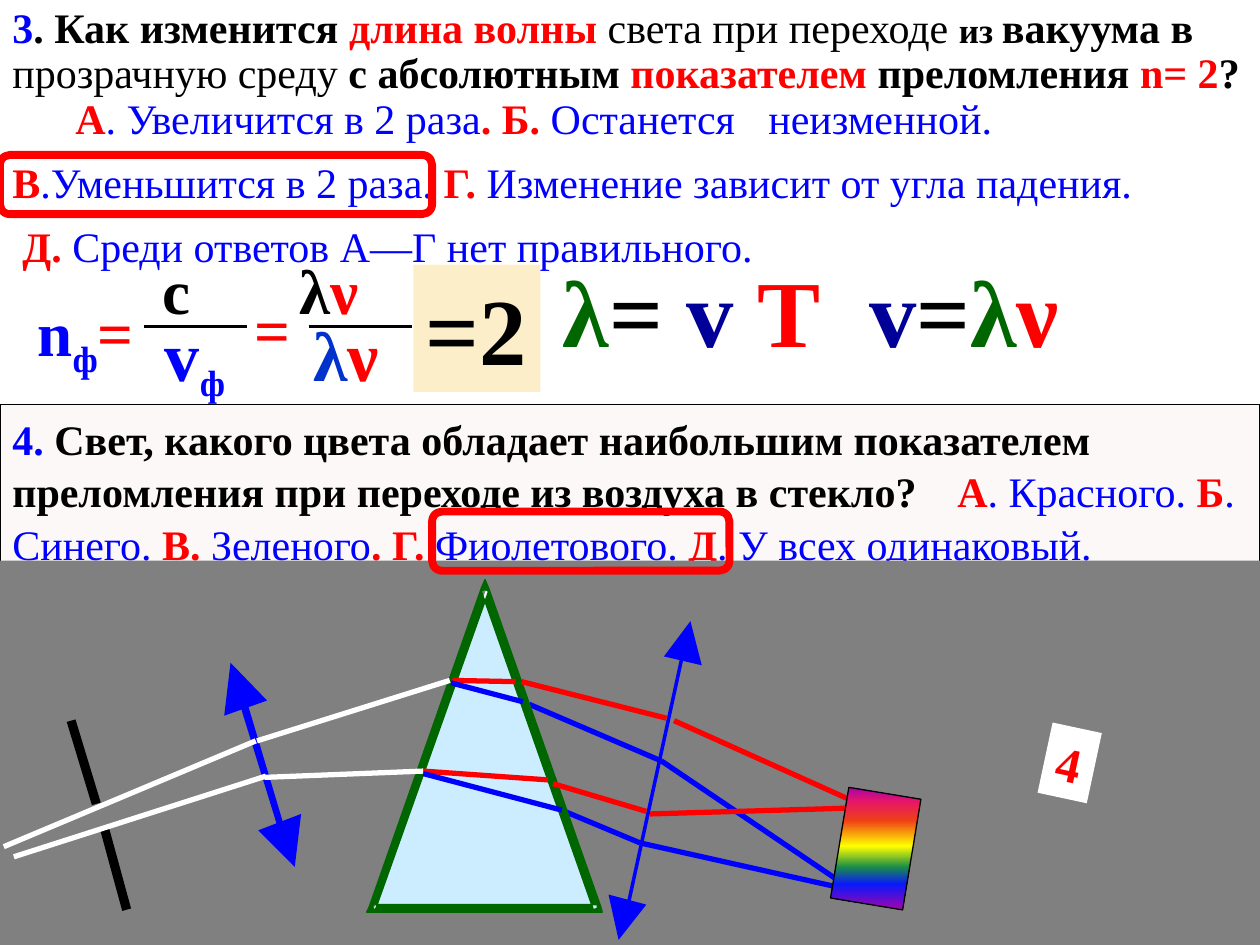
from lxml import etree
from pptx import Presentation
from pptx.dml.color import RGBColor
from pptx.enum.shapes import MSO_CONNECTOR, MSO_SHAPE
from pptx.enum.text import MSO_ANCHOR, MSO_AUTO_SIZE, PP_ALIGN
from pptx.oxml.ns import qn
from pptx.util import Emu, Pt

PX = 9144
BLACK, WHITE, GREY = "000000", "FFFFFF", "808080"
RED, BLUE, NAVY, GREEN = "FF0000", "0000FF", "000099", "006600"


def color(value):
    return RGBColor.from_string(value)


def px(*lengths):
    return [Emu(length * PX) for length in lengths]


def sub(parent, tag, **attributes):
    return etree.SubElement(parent, qn(tag), attributes)


class Board:
    font = "Times New Roman"

    def __init__(self, slide):
        self.slide = slide
        self.shapes = slide.shapes

    def paint(self, shape, fill=None, line=None, width=0.75, alpha=None):
        shape.shadow.inherit = False
        if fill:
            shape.fill.solid()
            shape.fill.fore_color.rgb = color(fill)
            if alpha:
                tone = shape.fill._xPr.find(".//" + qn("a:srgbClr"))
                sub(tone, "a:alpha", val=str(alpha * 1000))
        else:
            shape.fill.background()
        if line:
            shape.line.color.rgb = color(line)
            shape.line.width = Pt(width)
        else:
            shape.line.fill.background()
        return shape

    def box(self, place, fill=None, line=None, width=0.75, alpha=None,
            kind=MSO_SHAPE.RECTANGLE, turn=0):
        shape = self.shapes.add_shape(kind, *px(*place))
        shape.rotation = turn
        return self.paint(shape, fill, line, width, alpha)

    def text(self, place, *paragraphs, wrap=True, **style):
        label = self.shapes.add_textbox(*px(*place))
        return self.compose(label, *paragraphs, wrap=wrap, **style)

    def compose(self, shape, *paragraphs, wrap=True, size=24, after=0, before=0,
                spacing=None, indents=(0,), tabs=()):
        frame = shape.text_frame
        frame.word_wrap = wrap
        frame.vertical_anchor = MSO_ANCHOR.TOP
        frame.auto_size = MSO_AUTO_SIZE.NONE if wrap else MSO_AUTO_SIZE.SHAPE_TO_FIT_TEXT
        for number, runs in enumerate(paragraphs):
            paragraph = frame.add_paragraph() if number else frame.paragraphs[0]
            paragraph.alignment = PP_ALIGN.LEFT
            paragraph.space_before, paragraph.space_after = Pt(before), Pt(after)
            if spacing:
                paragraph.line_spacing = spacing
            properties = paragraph._p.get_or_add_pPr()
            properties.set("marL", str(indents[number % len(indents)] * PX))
            properties.set("indent", "0")
            if tabs:
                stops = sub(properties, "a:tabLst")
                for stop in tabs:
                    sub(stops, "a:tab", pos=str(stop * PX), algn="l")
            paragraph.font.name = self.font
            paragraph.font.size = Pt(size)
            for words, tone, *options in runs:
                self.run(paragraph, words, tone, **(options[0] if options else {}))
        return shape

    def run(self, paragraph, words, tone, bold=True, size=None, sunk=False):
        if words.startswith("\n"):
            paragraph.add_line_break()
            words = words[1:]
        run = paragraph.add_run()
        run.text = words
        run.font.bold = bold
        run.font.color.rgb = color(tone)
        if size:
            run.font.size = Pt(size)
        if sunk:
            run.font._element.set("baseline", "-25000")

    def line(self, start, end, tone, width=3):
        line = self.shapes.add_connector(MSO_CONNECTOR.STRAIGHT, *px(*start, *end))
        line.line.color.rgb = color(tone)
        line.line.width = Pt(width)
        sub(line._element.spPr, "a:effectLst")

    def outline(self, fill, *contours, line=None, width=0.75):
        builder = self.shapes.build_freeform(*contours[0][0], scale=PX)
        for number, (start, *rest) in enumerate(contours):
            if number:
                builder.move_to(*start)
            builder.add_line_segments(rest, close=True)
        self.paint(builder.convert_to_shape(), fill, line, width)

    def spectrum(self, place, turn, stops):
        band = self.box(place, WHITE, BLACK, turn=turn)
        band.fill.gradient()
        gradient = band._element.spPr.find(qn("a:gradFill"))
        gradient.set("rotWithShape", "0")
        for child in list(gradient):
            gradient.remove(child)
        tones = sub(gradient, "a:gsLst")
        for position, tone in stops:
            stop = sub(tones, "a:gs", pos=str(position * 1000))
            sub(stop, "a:srgbClr", val=tone)
        sub(gradient, "a:lin", ang="5400000", scaled="0")


def questions(board):
    plain = {"bold": False}
    board.text(
        (0, 0, 1000, 234),
        [("3", BLUE), (". Как изменится ", BLACK), ("длина волны ", RED),
         ("света при переходе ", BLACK, plain), ("из ", BLACK, {"size": 20}),
         ("вакуума в ", BLACK), ("прозрачную среду ", BLACK, plain),
         ("с абсолютным ", BLACK), ("показателем", RED), (" преломления ", BLACK),
         ("n= 2", RED), ("?", BLACK), ("\n\tА", RED),
         (". Увеличится в 2 раза", BLUE, plain), (". Б.", RED),
         (" Останется\tнеизменной.", BLUE, plain)],
        [("В", RED), (".Уменьшится в 2 раза. ", BLUE, plain), ("Г.", RED),
         (" Изменение зависит от угла падения.", BLUE, plain)],
        [("Д.", RED), (" Среди ответов А—Г нет правильного.", BLUE, plain)],
        spacing=Pt(26), before=0.6, after=10, indents=(0, 0, 8), tabs=(17, 565))
    formula(board)
    color_question = board.box((0, 321, 1000, 156), "EEE0DB", BLACK, alpha=22)
    board.compose(
        color_question,
        [("4. ", BLUE),
         ("Свет, какого цвета обладает наибольшим показателем преломления "
          "при переходе из воздуха в стекло?", BLACK),
         ("\tА", RED), (". Красного. ", BLUE, plain),
         ("Б", RED), (". Синего. ", BLUE, plain),
         ("В.", RED), (" Зеленого", BLUE, plain),
         (". Г.", RED), (" Фиолетового.", BLUE, plain),
         (" Д", RED), (". У всех одинаковый.", BLUE, plain)],
        spacing=1.05, before=0.6, after=10, tabs=(768,))


def formula(board):
    sunk = {"sunk": True}
    for place, size, indent, runs in (
            ((20, 228, 104, 76), 36, 0, [("n", BLUE), ("ф", BLUE, sunk), ("=", RED)]),
            ((90, 195, 126, 71), 36, 29, [("с", BLACK)]),
            ((93, 242, 126, 71), 40, 28,
             [("v", BLUE), ("ф", BLUE, {"sunk": True, "size": 36})]),
            ((192, 226, 63, 76), 36, 0, [("=", RED)]),
            ((221, 195, 126, 71), 36, 7, [("λ", BLACK), ("ν", RED)]),
            ((225, 242, 126, 71), 40, 14, [("λ", "0033CC"), ("ν", RED)])):
        board.text(place, runs, size=size, after=10, indents=(indent,))
    for left in (114, 245):
        board.line((left, 259), (left + 82, 259), BLACK, 1.5)
    board.text((437, 196, 230, 101),
               [("λ", GREEN), ("= ", BLACK), ("v ", NAVY), ("T", RED)],
               size=54, wrap=False)
    board.text((680, 196, 182, 101),
               [("v", NAVY), ("=", BLACK), ("λ", GREEN), ("ν", RED)],
               size=54, wrap=False)
    ratio = board.box((328, 210, 101, 101), "FBEEC9")
    board.compose(ratio, [("=2", BLACK)], size=54, wrap=False)


def spectroscope(board):
    board.box((0, 445, 1000, 305), GREY)
    for start, end in (((420, 559), (525, 604)), ((441, 641), (508, 669))):
        board.line(start, end, BLUE)

    board.outline("CCECFF", [(386, 469), (297, 722), (475, 722)], line=WHITE, width=0)
    board.outline(
        GREEN,
        [(293, 720), (291, 724), (296, 724), (474, 724), (478, 724),
         (477, 720), (388, 467), (385, 460), (382, 467)],
        [(388, 469), (385, 468), (382, 469), (471, 722), (474, 721),
         (474, 718), (296, 718), (296, 721), (298, 722)],
        line=GREEN)

    for tone, *corners in (
            (BLUE, (197, 560), (191, 561), (220, 655), (225, 654)),
            (BLUE, (212, 556), (183, 526), (178, 568)),
            (BLUE, (205, 659), (234, 688), (239, 646)),
            (BLACK, (60, 571), (53, 573), (73, 639), (80, 637)),
            (BLACK, (86, 655), (79, 657), (97, 723), (104, 721))):
        board.outline(tone, corners)

    for start, end in (((3, 672), (203, 588)), ((204, 588), (357, 540)),
                       ((11, 680), (211, 616)), ((210, 617), (336, 612))):
        board.line(start, end, WHITE)

    board.line((541, 523), (499, 716), BLUE, 0)
    board.outline(BLUE, [(557, 528), (548, 493), (527, 521)])
    board.outline(BLUE, [(483, 710), (491, 746), (513, 718)])

    for tone, start, end in (
            (RED, (359, 540), (409, 541)), (RED, (414, 541), (529, 570)),
            (RED, (535, 572), (682, 638)), (BLUE, (525, 604), (679, 708)),
            (BLUE, (508, 669), (687, 709)), (RED, (336, 612), (435, 619)),
            (RED, (439, 622), (513, 644)), (RED, (516, 646), (687, 641)),
            (BLUE, (336, 614), (446, 643)), (BLUE, (358, 542), (415, 557))):
        board.line(start, end, tone)

    board.spectrum((666, 629, 58, 89), 189.4, (
        (0, "A603AB"), (12, "E81766"), (27, "EE3F17"), (48, "FFFF00"),
        (65, "1A8D48"), (79, "0819FB"), (100, "A603AB")))
    answer = board.box((829, 577, 40, 57), WHITE, turn=12.1)
    board.compose(answer, [("4", RED)], size=28, wrap=False)


def main():
    deck = Presentation()
    deck.slide_width, deck.slide_height = px(1000, 750)
    board = Board(deck.slides.add_slide(deck.slide_layouts[6]))
    questions(board)
    spectroscope(board)
    for place in ((0, 123, 343, 47), (343, 406, 236, 47)):
        board.box(place, line=RED, width=4.5, kind=MSO_SHAPE.ROUNDED_RECTANGLE)
    deck.save("out.pptx")


if __name__ == "__main__":
    main()
